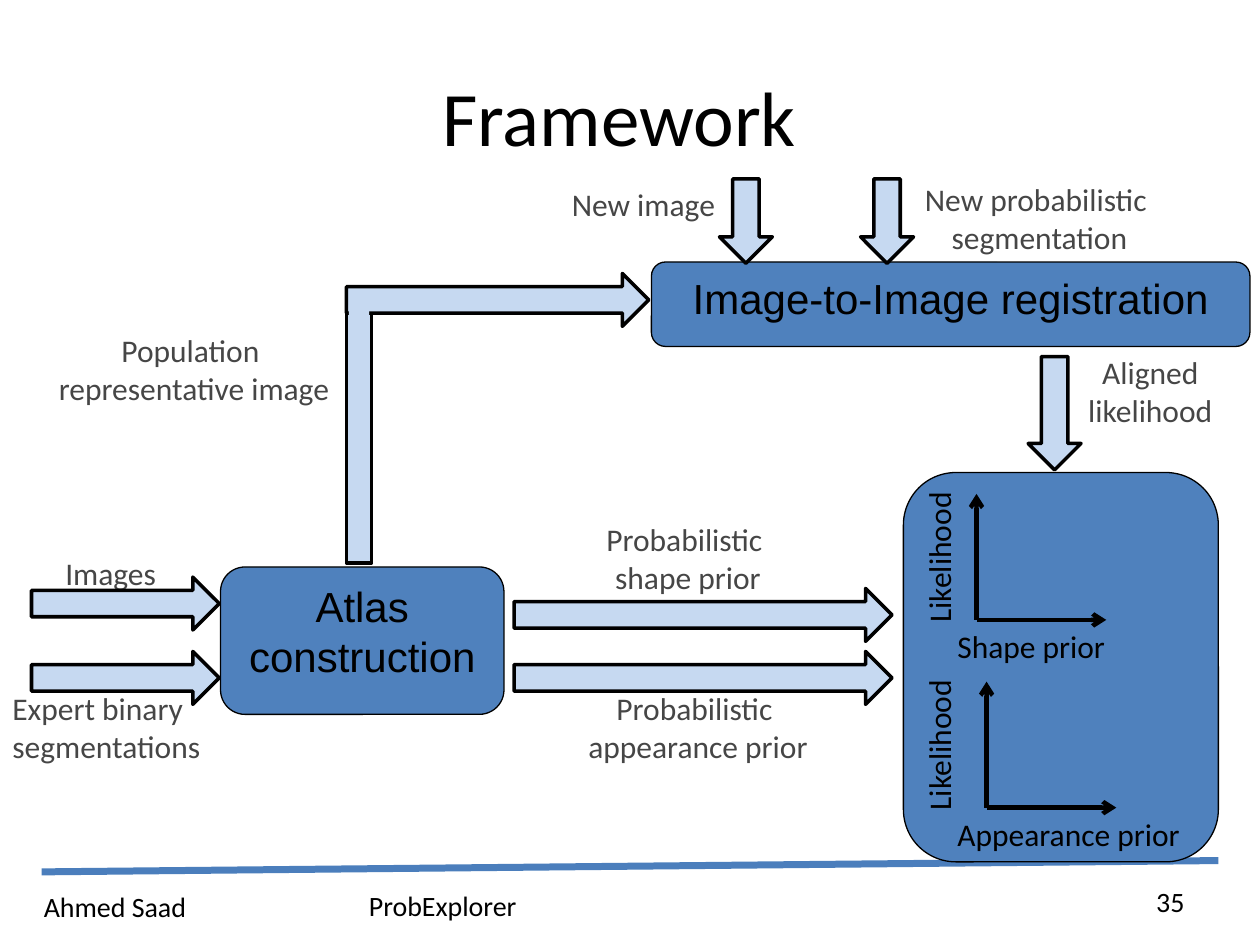
from lxml import etree
from pptx import Presentation
from pptx.dml.color import RGBColor
from pptx.enum.shapes import MSO_CONNECTOR, MSO_SHAPE
from pptx.enum.text import MSO_ANCHOR, MSO_AUTO_SIZE, PP_ALIGN
from pptx.oxml.ns import qn
from pptx.util import Inches, Pt

LEFT, CENTER, RIGHT = PP_ALIGN.LEFT, PP_ALIGN.CENTER, PP_ALIGN.RIGHT
TOP, MIDDLE = MSO_ANCHOR.TOP, MSO_ANCHOR.MIDDLE
GROW, FIXED = MSO_AUTO_SIZE.SHAPE_TO_FIT_TEXT, MSO_AUTO_SIZE.NONE
STRAIGHT = MSO_CONNECTOR.STRAIGHT
ROUNDED, RECTANGLE = MSO_SHAPE.ROUNDED_RECTANGLE, MSO_SHAPE.RECTANGLE
RIGHT_ARROW, DOWN_ARROW = MSO_SHAPE.RIGHT_ARROW, MSO_SHAPE.DOWN_ARROW

COLORS = {"black": "000000", "label": "464646", "box": "4F81BD",
          "arrow": "C6D9F1", "rule": "4B7EBC"}

TITLE = ("Framework", (0.58, 0.17, 8.67, 1.5))
RULE = ((0.33, 6.92), (9.67, 6.83))
FOOTERS = [
    ("Ahmed Saad", (0.25, 7.01, 1.5, 0.37), LEFT, TOP),
    ("ProbExplorer", (2.83, 7, 1.67, 0.37), LEFT, TOP),
    ("35", (7.17, 6.95, 2.33, 0.4), RIGHT, MIDDLE),
]
BOXES = [
    ("Atlas construction", (1.75, 4.5, 2.25, 1.17)),
    ("", (7.17, 3.75, 2.5, 3.09)),
    ("Image-to-Image registration", (5.17, 2.08, 4.75, 0.67)),
]
PLOTS = [
    {"name": "Shape prior", "corner": (7.75, 4.92), "width": 1.5},
    {"name": "Appearance prior", "corner": (7.83, 6.41), "width": 2.17},
]
AXIS_LENGTHS = (1.03, 1.0)
LABELS = [
    ("Images", (0.42, 4.35, 1.5, 0.4), LEFT),
    ("Expert binary\nsegmentations", (0, 5.42, 2.5, 0.71), LEFT),
    ("Probabilistic \nshape prior", (3.92, 4.08, 3.08, 0.71), CENTER),
    ("Probabilistic \nappearance prior", (4, 5.42, 3.08, 0.71), CENTER),
    ("Population \nrepresentative image", (-0.17, 2.58, 3.42, 0.71), CENTER),
    ("New image", (4.44, 1.42, 2.06, 0.4), LEFT),
    ("New probabilistic \nsegmentation", (6.75, 1.38, 3, 0.71), CENTER),
    ("Aligned\nlikelihood", (8.1, 2.75, 2.06, 0.71), CENTER),
]
BREADTH = 0.42
ARROWS = [
    (RIGHT_ARROW, 0.25, 4.58, 1.49),
    (RIGHT_ARROW, 0.25, 5.17, 1.49),
    (RIGHT_ARROW, 4.08, 5.17, 3),
    (RIGHT_ARROW, 4.08, 4.67, 3),
    (RIGHT_ARROW, 2.75, 2.17, 2.4),
    (DOWN_ARROW, 5.71, 1.42, 0.67),
    (DOWN_ARROW, 6.83, 1.42, 0.67),
    (DOWN_ARROW, 8.16, 2.83, 0.9),
]
ELBOW_STEM = (2.75, 2.42, 0.2, 2.05)
ELBOW_JOINT = (2.77, 2.42, 0.16, 0.17)


def color(name):
    return RGBColor.from_string(COLORS[name])


def inches(values):
    return [Inches(value) for value in values]


def write(shape, text, size, font="Calibri", ink="black", align=LEFT,
          anchor=TOP, fit=FIXED):
    frame = shape.text_frame
    frame.text = text
    frame_format = {"word_wrap": True, "vertical_anchor": anchor, "auto_size": fit}
    for name, value in frame_format.items():
        setattr(frame, name, value)
    for paragraph in frame.paragraphs:
        paragraph.alignment = align
        for name, value in {"name": font, "size": Pt(size)}.items():
            setattr(paragraph.font, name, value)
        paragraph.font.color.rgb = color(ink)


def add_text(slide, text, place, size=18, **style):
    shape = slide.shapes.add_textbox(*inches(place))
    write(shape, text, size, fit=style.pop("fit", GROW), **style)
    return shape


def add_block(slide, kind, place, fill, line_width):
    shape = slide.shapes.add_shape(kind, *inches(place))
    shape.shadow.inherit = False
    shape.fill.solid()
    shape.fill.fore_color.rgb = color(fill)
    if line_width:
        shape.line.color.rgb = color("black")
        shape.line.width = Pt(line_width)
    else:
        shape.line.fill.background()
    return shape


def add_line(slide, start, end, ink, width, arrow=False):
    line = slide.shapes.add_connector(STRAIGHT, *inches(start + end))
    line.line.color.rgb = color(ink)
    line.line.width = Pt(width)
    properties = line._element.spPr
    if arrow:
        etree.SubElement(properties.find(qn("a:ln")), qn("a:tailEnd"), type="arrow")
    etree.SubElement(properties, qn("a:effectLst"))


def add_plot(slide, name, corner, width):
    x, y = corner
    across, up = AXIS_LENGTHS
    for end in ((x + across, y), (x, y - up)):
        add_line(slide, corner, end, "black", 2.5, arrow=True)
    add_text(slide, name, (7.5, y + 0.01, width, 0.4))
    likelihood = add_text(slide, "Likelihood", (7.25, y - 1.18, 0.5, 1.3))
    likelihood.text_frame._txBody.bodyPr.set("vert", "vert270")


def main():
    """Build the framework slide."""
    presentation = Presentation()
    presentation.slide_width, presentation.slide_height = inches((10, 7.5))
    slide = presentation.slides.add_slide(presentation.slide_layouts[5])

    text, place = TITLE
    title = slide.shapes.title
    title.left, title.top, title.width, title.height = inches(place)
    write(title, text, 44, align=CENTER, anchor=MIDDLE)

    add_line(slide, *RULE, "rule", 4)
    for text, place, align, anchor in FOOTERS:
        fit = FIXED if anchor == MIDDLE else GROW
        add_text(slide, text, place, 16, align=align, anchor=anchor, fit=fit)
    for text, place in BOXES:
        box = add_block(slide, ROUNDED, place, "box", 0.75)
        if text:
            write(box, text, 24, font="Arial", align=CENTER)
    for plot in PLOTS:
        add_plot(slide, **plot)
    for text, place, align in LABELS:
        add_text(slide, text, place, ink="label", align=align)

    add_block(slide, RECTANGLE, ELBOW_STEM, "arrow", 2)
    for kind, left, top, length in ARROWS:
        size = (length, BREADTH) if kind == RIGHT_ARROW else (BREADTH, length)
        add_block(slide, kind, (left, top, *size), "arrow", 2)
    add_block(slide, RECTANGLE, ELBOW_JOINT, "arrow", 0)

    presentation.save("out.pptx")


if __name__ == "__main__":
    main()
